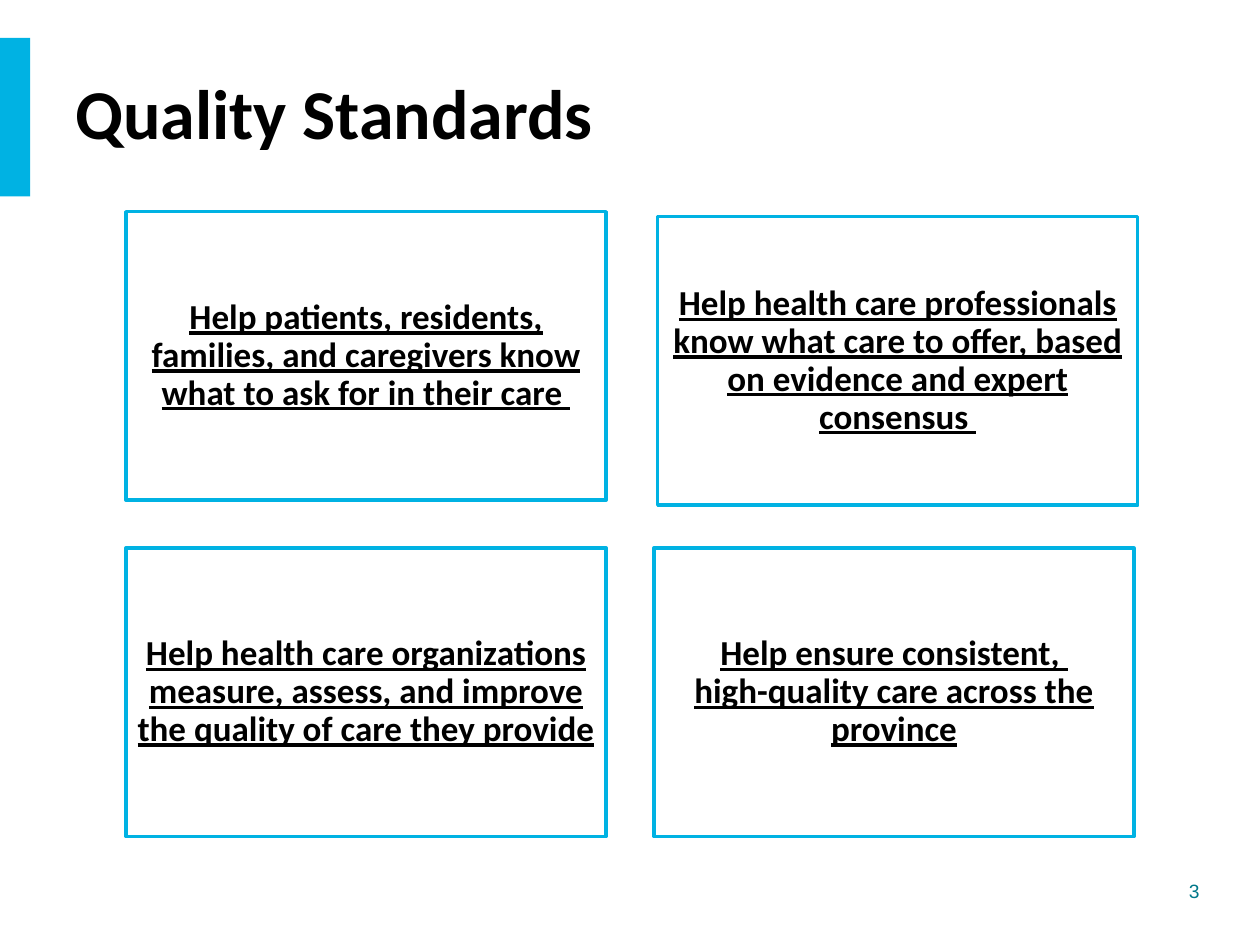
from dataclasses import dataclass

from pptx import Presentation
from pptx.dml.color import RGBColor
from pptx.enum.shapes import MSO_SHAPE
from pptx.enum.text import MSO_ANCHOR, PP_ALIGN
from pptx.util import Inches, Pt

RECTANGLE = MSO_SHAPE.RECTANGLE
TOP, MIDDLE = MSO_ANCHOR.TOP, MSO_ANCHOR.MIDDLE
LEFT, CENTER, RIGHT = PP_ALIGN.LEFT, PP_ALIGN.CENTER, PP_ALIGN.RIGHT
COLORS = {"accent": "00B2E3", "number": "00788A", "text": "000000"}
CARD_WIDTH, CARD_HEIGHT = 3.81, 2.29


@dataclass(frozen=True)
class Card:
    left: float
    top: float
    text: str


CARDS = [
    Card(1, 1.68, "Help patients, residents, families, and caregivers know "
                  "what to ask for in their care "),
    Card(5.22, 1.72, "Help health care professionals know what care to offer, "
                     "based on evidence and expert consensus "),
    Card(1, 4.35, "Help health care organizations measure, assess, and improve "
                  "the quality of care they provide"),
    Card(5.19, 4.35, "Help ensure consistent, \vhigh-quality care across the province"),
]


def color(name: str) -> RGBColor:
    return RGBColor.from_string(COLORS[name])


def write_text(shape, text: str, *, size: float, font: str = "Calibri",
               fill: str = "text", bold: bool = False, underline: bool = False,
               align=LEFT, anchor=MIDDLE, spacing: float = 1.0) -> None:
    frame = shape.text_frame
    frame.word_wrap = True
    frame.vertical_anchor = anchor
    para = frame.paragraphs[0]
    para.text = text
    para.alignment = align
    para.line_spacing = spacing
    for span in para.runs:
        span.font.name = font
        span.font.size = Pt(size)
        span.font.bold = bold
        span.font.underline = underline
        span.font.color.rgb = color(fill)


def add_box(page, left: float, top: float, width: float, height: float):
    return page.shapes.add_textbox(Inches(left), Inches(top), Inches(width), Inches(height))


def add_rectangle(page, left: float, top: float, width: float, height: float):
    shape = page.shapes.add_shape(
        RECTANGLE, Inches(left), Inches(top), Inches(width), Inches(height))
    shape.shadow.inherit = False
    return shape


def add_accent_bar(page) -> None:
    bar = add_rectangle(page, 0, 0.3, 0.24, 1.26)
    bar.fill.solid()
    bar.fill.fore_color.rgb = color("accent")
    bar.line.fill.background()


def add_card(page, card: Card) -> None:
    box = add_rectangle(page, card.left, card.top, CARD_WIDTH, CARD_HEIGHT)
    box.fill.background()
    box.line.color.rgb = color("accent")
    box.line.width = Pt(2)
    frame = box.text_frame
    frame.margin_left = frame.margin_right = Inches(0.08)
    frame.margin_top = frame.margin_bottom = Inches(0.08)
    write_text(box, card.text, size=20, bold=True, underline=True,
               align=CENTER, spacing=0.9)


def main() -> None:
    """Build the quality standards slide and save it."""
    deck = Presentation()
    deck.slide_width, deck.slide_height = Inches(10), Inches(7.5)
    page = deck.slides.add_slide(deck.slide_layouts[6])
    write_text(add_box(page, 8.45, 6.93, 1.17, 0.29), "3", size=11, font="Arial",
               fill="number", align=RIGHT, anchor=TOP)
    add_accent_bar(page)
    write_text(add_box(page, 0.5, 0.5, 7.81, 0.77), "Quality Standards", size=40, bold=True)
    for card in CARDS:
        add_card(page, card)
    deck.save("out.pptx")


if __name__ == "__main__":
    main()
